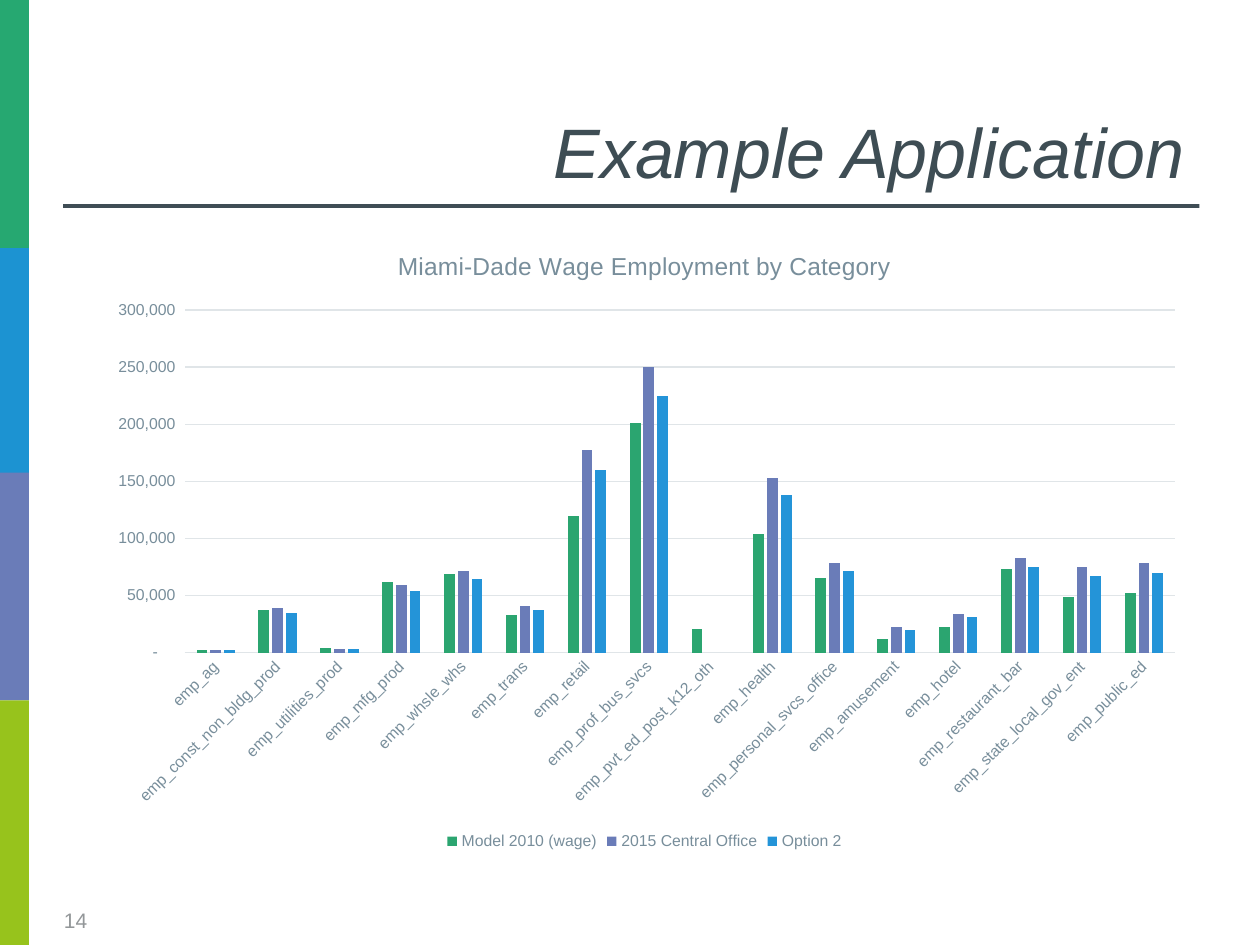
from pptx import Presentation
from pptx.chart.data import CategoryChartData
from pptx.dml.color import RGBColor
from pptx.enum.chart import XL_CHART_TYPE, XL_LEGEND_POSITION, XL_TICK_MARK
from pptx.enum.shapes import MSO_SHAPE
from pptx.enum.text import MSO_ANCHOR, PP_ALIGN
from pptx.util import Inches, Pt


def color(hex_string):
    return RGBColor.from_string(hex_string)


def style_font(font, size, hex_string):
    font.name = "Arial"
    font.size = Pt(size)
    font.bold = False
    font.color.rgb = color(hex_string)


deck = Presentation()
deck.slide_width = Inches(10)
deck.slide_height = Inches(7.5)
page = deck.slides.add_slide(deck.slide_layouts[5])

# Side band and title rule: left, top, width, height, fill
bars = [
    (0, 0, 0.23, 1.97, "26A871"),
    (0, 1.97, 0.23, 1.79, "1C93D2"),
    (0, 3.75, 0.23, 1.81, "6A7CB8"),
    (0, 5.56, 0.23, 1.94, "97C31C"),
    (0.5, 1.62, 9.02, 0.03, "3F4D55"),
]
for left, top, width, height, fill in bars:
    bar = page.shapes.add_shape(
        MSO_SHAPE.RECTANGLE, Inches(left), Inches(top), Inches(width), Inches(height))
    bar.shadow.inherit = False
    bar.fill.solid()
    bar.fill.fore_color.rgb = color(fill)
    bar.line.fill.background()

title = page.shapes.title
title.left, title.top = Inches(0.5), Inches(-0.01)
title.width, title.height = Inches(9), Inches(1.59)
title.text_frame.text = "Example Application"
title.text_frame.vertical_anchor = MSO_ANCHOR.BOTTOM
para = title.text_frame.paragraphs[0]
para.alignment = PP_ALIGN.RIGHT
span = para.runs[0]
style_font(span.font, 40, "3E4D54")
span.font.italic = True

number_box = page.shapes.add_textbox(Inches(0.41), Inches(7.1), Inches(0.73), Inches(0.4))
number_box.text_frame.word_wrap = True
number_box.text_frame.vertical_anchor = MSO_ANCHOR.MIDDLE
number_box.text_frame.text = "14"
style_font(number_box.text_frame.paragraphs[0].runs[0].font, 12, "939799")

# Wage employment chart, values in thousands
categories = [
    "emp_ag", "emp_const_non_bldg_prod", "emp_utilities_prod", "emp_mfg_prod",
    "emp_whsle_whs", "emp_trans", "emp_retail", "emp_prof_bus_svcs",
    "emp_pvt_ed_post_k12_oth", "emp_health", "emp_personal_svcs_office",
    "emp_amusement", "emp_hotel", "emp_restaurant_bar",
    "emp_state_local_gov_ent", "emp_public_ed",
]
series_rows = [
    ("Model 2010 (wage)", "2BA570",
     [2, 37, 4, 62, 69, 33, 120, 201, 21, 104, 65, 12, 22, 73, 49, 52]),
    ("2015 Central Office", "6A7CB8",
     [2, 39, 3, 59, 71, 41, 177, 250, None, 153, 78, 22, 34, 83, 75, 78]),
    ("Option 2", "2494D8",
     [2, 35, 3, 54, 64, 37, 160, 225, None, 138, 71, 20, 31, 75, 67, 70]),
]
data = CategoryChartData(number_format="#,##0")
data.categories = categories
for name, fill, thousands in series_rows:
    data.add_series(name, [None if value is None else value * 1000 for value in thousands])

chart = page.shapes.add_chart(
    XL_CHART_TYPE.COLUMN_CLUSTERED,
    Inches(0.73), Inches(1.8), Inches(8.77), Inches(4.99), data).chart
style_font(chart.font, 10, "3F4D55")

chart.has_title = True
chart.chart_title.include_in_layout = False
chart.chart_title.text_frame.text = "Miami-Dade Wage Employment by Category"
style_font(chart.chart_title.text_frame.paragraphs[0].runs[0].font, 14, "788E9B")

chart.has_legend = True
chart.legend.position = XL_LEGEND_POSITION.BOTTOM
chart.legend.include_in_layout = False
style_font(chart.legend.font, 9, "788E9B")

plot = chart.plots[0]
plot.vary_by_categories = False
plot.gap_width = 219
plot.overlap = -27
for series, (name, fill, thousands) in zip(plot.series, series_rows):
    series.format.fill.solid()
    series.format.fill.fore_color.rgb = color(fill)

category_axis, value_axis = chart.category_axis, chart.value_axis
for axis in (category_axis, value_axis):
    axis.major_tick_mark = XL_TICK_MARK.NONE
    axis.minor_tick_mark = XL_TICK_MARK.NONE
    style_font(axis.tick_labels.font, 9, "788E9B")

value_axis.minimum_scale = 0
value_axis.maximum_scale = 300000
value_axis.major_unit = 50000
value_axis.has_major_gridlines = True
value_axis.format.line.fill.background()
value_axis.tick_labels.number_format = '_(* #,##0_);_(* \\(#,##0\\);_(* "-"??_);_(@_)'
value_axis.tick_labels.number_format_is_linked = False
for line in (category_axis.format.line, value_axis.major_gridlines.format.line):
    line.color.rgb = color("E0E5E8")
    line.width = Pt(0.75)

# Slant the category labels by 45 degrees (unit: 1/60000 degree)
label_body = category_axis.tick_labels.font._element.getparent().getparent().getparent().bodyPr
label_body.set("rot", str(-45 * 60000))
label_body.set("vert", "horz")

deck.save("out.pptx")
